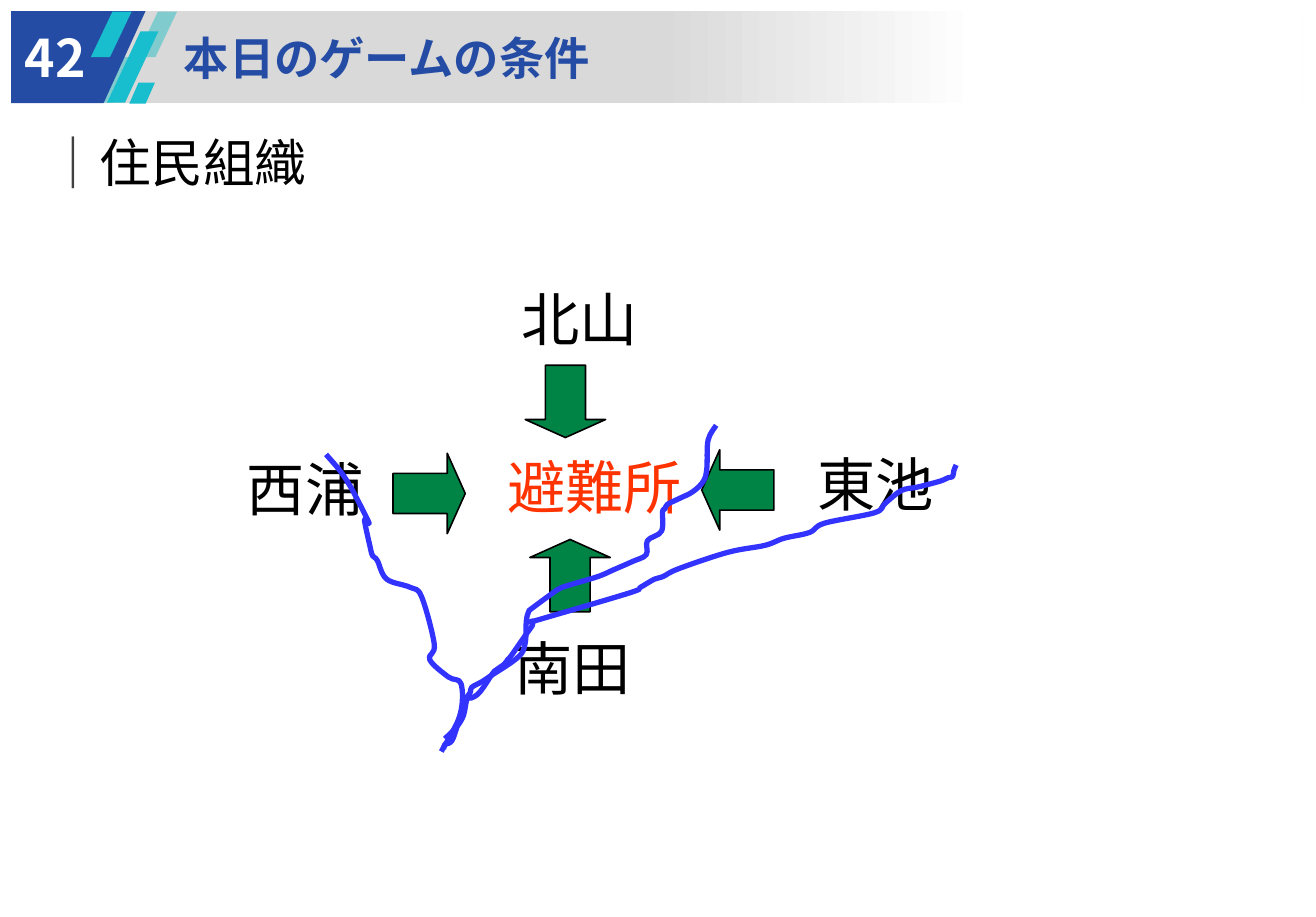
from lxml.etree import SubElement
from pptx import Presentation
from pptx.dml.color import RGBColor
from pptx.enum.shapes import MSO_SHAPE as SHAPE
from pptx.enum.text import MSO_ANCHOR as ANCHOR, PP_ALIGN as ALIGN
from pptx.oxml.ns import qn
from pptx.util import Inches, Pt

CELL = Inches(0.1)
COLS, ROWS = 113, 78.7
CJK = "Noto Sans CJK JP"
COLORS = {
    "navy": "254CA4", "teal": "18BDCE", "pale": "80CBCD", "band": "D9D9D9",
    "white": "FFFFFF", "black": "000000", "grey": "404040",
    "red": "FF3300", "green": "008446", "river": "3333FF",
}
STRIPES = [
    (7.8, 1, 3.5, 3.9, 0.53, "teal"),
    (11.1, 7.1, 2.2, 1.8, 0.44, "teal"),
    (11.7, 1, 3.5, 3.9, 0.53, "pale"),
    (9.2, 2.7, 4.4, 6.1, 0.65, "teal"),
]
PLACES = [
    ("東池", 66.9, 32.2, 15.8, 18.6, "black"),
    ("避難所", 39.8, 38.2, 18.9, 7, "red"),
    ("北山", 41.5, 22.3, 15.8, 10, "black"),
    ("西浦", 17.9, 32.6, 15.8, 18.6, "black"),
    ("南田", 40.9, 52.3, 15.8, 10, "black"),
]
ARROWS = [(48.95, 49.4, 0), (36.85, 42.35, 90), (48.55, 34.45, 180), (63.35, 42.05, 270)]
RIVERS = [
    [(37.9, 64.5), (39.5, 61.4), (39.6, 58.7), (38.5, 58.1), (36.9, 56.6),
     (37.3, 55.3), (36.2, 51.2), (35.2, 50.4), (33.2, 49.7), (32.4, 48.1),
     (32, 47.7), (31.8, 47), (31.3, 44.6), (31.7, 44.9), (30.6, 42.7),
     (30, 41.6), (29.2, 40.4), (28, 39)],
    [(38.1, 64.3), (38.2, 63.9), (38.9, 63.4), (39.8, 60.4), (39.9, 60.1),
     (40.4, 59.4), (40.5, 59), (41.4, 58.5), (42, 58.1), (44.5, 56.4),
     (45.1, 55.2), (45.2, 53.3), (45.4, 52.5), (45.7, 52.2), (47.6, 50.8),
     (47.9, 50.6), (48.6, 50.3), (51.3, 49.5), (52.7, 48.9), (54.3, 48.2),
     (55.5, 47.6), (55.6, 46.4), (56.8, 45.6), (56.9, 43.9), (57.1, 43.7),
     (57.3, 43.3), (58.3, 42.8), (59.5, 42.2), (60.4, 41.3), (60.7, 40.2),
     (60.8, 37.8), (61.5, 36.5)],
    [(38.2, 63.4), (39.2, 62.4), (39.8, 61.4), (40.1, 60), (40.5, 59.9),
     (41.2, 59.4), (42.3, 57.8), (42.6, 57.5), (43.3, 57), (43.6, 56.6),
     (43.8, 56.4), (44.3, 55.7), (45.2, 54.4), (45.7, 53.7), (45.8, 53.3),
     (46.2, 53.2), (54, 50.9), (55, 50.4), (56.2, 49.7), (56.9, 49.5),
     (58.3, 48.8), (62.5, 47.4), (65.7, 46.8), (67.3, 46.2), (69.5, 45.7),
     (70.8, 44.9), (75.1, 44), (76, 43.2), (77.4, 42.1), (78.8, 41.8),
     (80.7, 41.3), (81.4, 41), (81.8, 40.9), (81.9, 40.4), (82.1, 39.9)],
]


def cells(*values):
    """Turn grid cells into lengths."""
    return [int(v * CELL) for v in values]


def rgb(name):
    """Look up a named colour."""
    return RGBColor.from_string(COLORS[name])


def paint(s, fill=None, line=None, width=1):
    """Set fill and outline, and drop the shadow."""
    s.shadow.inherit = False
    if fill:
        s.fill.solid()
        s.fill.fore_color.rgb = rgb(fill)
    else:
        s.fill.background()
    if line:
        s.line.color.rgb = rgb(line)
        s.line.width = Pt(width)
    else:
        s.line.fill.background()
    return s


def write(s, text, size=36, color="black", font="Arial", bold=False,
          align=ALIGN.LEFT, inset=0, wrap=False):
    """Append a formatted run to the first paragraph of a shape."""
    tf = s.text_frame
    tf.word_wrap = wrap
    tf.vertical_anchor = ANCHOR.MIDDLE
    tf.margin_left = tf.margin_right = tf.margin_top = tf.margin_bottom = Inches(inset)
    p = tf.paragraphs[0]
    p.alignment = align
    r = p.add_run()
    r.text = text
    r.font.size, r.font.bold, r.font.name = Pt(size), bold, font
    r.font.color.rgb = rgb(color)
    SubElement(r.font._element, qn("a:ea"), typeface=CJK)


def add_shape(slide, kind, left, top, width, height, **look):
    """Add a preset shape placed on the grid."""
    return paint(slide.shapes.add_shape(kind, *cells(left, top, width, height)), **look)


def add_outline(slide, points, close=False, **look):
    """Add a freeform through grid points."""
    points = [cells(*point) for point in points]
    builder = slide.shapes.build_freeform(*points[0])
    builder.add_line_segments(points[1:], close=close)
    return paint(builder.convert_to_shape(), **look)


def add_river(slide, points):
    """Add a river whose segments are curves through the points."""
    s = add_outline(slide, points, line="river", width=3.25)
    local = [(x - s.left, y - s.top) for x, y in (cells(*point) for point in points)]
    padded = [local[0], *local, local[-1]]
    for i, segment in enumerate(list(s._element.iter(qn("a:lnTo")))):
        a, b, c, d = padded[i:i + 4]
        first = [q + (r - p) / 6 for p, q, r in zip(a, b, c)]
        second = [q - (r - p) / 6 for p, q, r in zip(b, c, d)]
        segment.clear()
        curve = SubElement(segment.getparent(), qn("a:cubicBezTo"))
        for x, y in (first, second, c):
            SubElement(curve, qn("a:pt"), x=str(int(x)), y=str(int(y)))
        segment.getparent().replace(segment, curve)


def add_stripe(slide, left, top, width, height, slant, color):
    """Add a slanted stripe of the header."""
    s = add_shape(slide, SHAPE.PARALLELOGRAM, left, top, width, height, fill=color)
    s.adjustments[0] = slant


def add_header(slide, number, title):
    """Add the fading band, the number block and the title."""
    band = add_shape(slide, SHAPE.RECTANGLE, 0.95, 0.95, COLS - 2.1, 7.9)
    band.fill.gradient()
    band.fill.gradient_angle = 0
    for stop, place, color in zip(band.fill.gradient_stops, (0.5, 0.75), ("band", "white")):
        stop.position = place
        stop.color.rgb = rgb(color)
    add_stripe(slide, 8.1, 4.9, 3.5, 3.9, 0.53, "pale")
    block = [(0.95, 0.95), (12.5, 0.95), (8.9, 8.85), (0.95, 8.85)]
    add_outline(slide, block, close=True, fill="navy")
    for stripe in STRIPES:
        add_stripe(slide, *stripe)
    s = slide.shapes.title
    s.left, s.top, s.width, s.height = cells(15.8, 2.75, 59.1, 4.3)
    write(s, title, size=28, color="navy", font=CJK, bold=True, wrap=True)
    slide.shapes._spTree.append(s._element)
    box = slide.shapes.add_textbox(*cells(2, 2.15, 5.5, 5.5))
    write(box, number, size=32, color="white", font=CJK, bold=True, align=ALIGN.CENTER)


def add_place(slide, name, left, top, width, height, color):
    """Add a place name in an unpainted oval."""
    s = add_shape(slide, SHAPE.OVAL, left, top, width, height)
    write(s, name, color=color, inset=0.1)


def add_arrow(slide, x, y, angle):
    """Add a block arrow centred on a grid point."""
    s = add_shape(slide, SHAPE.UP_ARROW, x - 3.45, y - 3.1, 6.9, 6.2,
                  fill="green", line="black")
    s.adjustments[0], s.adjustments[1] = 0.5, 0.25
    s.rotation = angle


def main():
    """Build the slide."""
    prs = Presentation()
    prs.slide_width, prs.slide_height = cells(COLS, ROWS)
    slide = prs.slides.add_slide(prs.slide_layouts[5])
    add_header(slide, "42", "本日のゲームの条件")
    heading = slide.shapes.add_textbox(*cells(3.7, 10.8, 23.2, 6.2))
    write(heading, "｜", size=32, color="grey", font=CJK, bold=True, inset=0.04)
    write(heading, "住民組織", size=32, inset=0.04)
    for place in PLACES:
        add_place(slide, *place)
    for arrow in ARROWS:
        add_arrow(slide, *arrow)
    for river in RIVERS:
        add_river(slide, river)
    prs.save("out.pptx")


if __name__ == "__main__":
    main()
